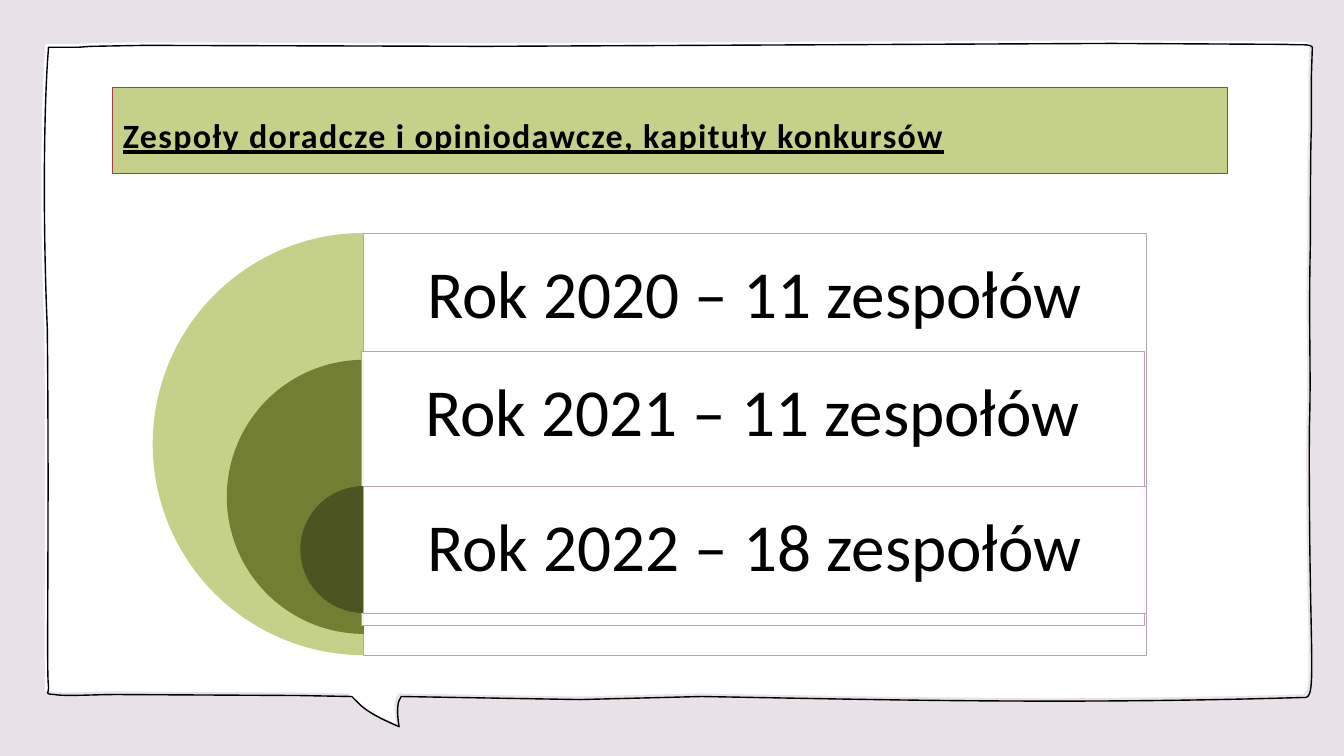
import pptx
import pptx.util
import pptx.dml.color
import pptx.enum.shapes
import pptx.enum.text
import pptx.oxml
import pptx.oxml.ns

Pt = pptx.util.Pt
RGBColor = pptx.dml.color.RGBColor
MSO_SHAPE = pptx.enum.shapes.MSO_SHAPE
MSO_ANCHOR = pptx.enum.text.MSO_ANCHOR
PP_ALIGN = pptx.enum.text.PP_ALIGN
qn = pptx.oxml.ns.qn
DRAWING_NS = pptx.oxml.ns.nsdecls("a")

LILAC = RGBColor(0xE8, 0xE2, 0xE8)
WHITE = RGBColor(0xFF, 0xFF, 0xFF)
BLACK = RGBColor(0x00, 0x00, 0x00)
RED = RGBColor(0xB1, 0x3B, 0x45)
MAUVE = RGBColor(0xB5, 0xA2, 0xB5)
LIGHT_GREEN = RGBColor(0xC5, 0xD1, 0x88)
OLIVE = RGBColor(0x72, 0x7F, 0x32)
DARK_OLIVE = RGBColor(0x4C, 0x54, 0x21)

BUBBLE_START = (7942, 310)
BUBBLE_SEGMENTS = [
    [(9187, 317)],
    [(9281, 324), (9360, 310), (9374, 338)],
    [(9367, 554)],
    [(9367, 677), (9367, 814), (9367, 936)],
    [(9360, 1022), (9360, 1692), (9360, 1742)],
    [(9346, 2376), (9367, 2628), (9353, 3060)],
    [(9346, 4723), (9418, 5004), (9310, 4982)],
    [(7603, 5033), (6278, 4997), (5011, 4975)],
    [(4140, 4997)],
    [(2866, 4975)],
    [(2851, 5004)],
    [(2837, 5033), (2837, 5112), (2851, 5191)],
    [(2772, 5155), (2664, 5112), (2578, 5040)],
    [(2513, 4975)],
    [(2131, 4968)],
    [(842, 4961)],
    [(648, 4961), (475, 4975), (389, 4961)],
    [(310, 4954), (353, 4961), (346, 4896)],
    [(331, 4788), (353, 3758), (338, 2347)],
    [(302, 1490), (317, 691), (346, 353)],
    [(346, 346), (346, 346), (346, 338)],
    [(389, 338)],
    [(554, 338)],
    [(648, 331)],
    [(1030, 324)],
    [(3456, 331)],
]

RING_CENTER = 259.9
PANEL_WIDTH = 558.7
LABEL_HEIGHT = 90.7
YEARS = [
    ("Rok 2020 – 11 zespołów", LIGHT_GREEN, 301.6, 166.4, 166.5, 259.9),
    ("Rok 2021 – 11 zespołów", OLIVE, 195.8, 257, 251.1, 258.5),
    ("Rok 2022 – 18 zespołów", DARK_OLIVE, 90.7, 347.2, 347.2, 259.9),
]


def add_bubble(slide, shift, fill=None, line=None):
    corners = [BUBBLE_START] + [segment[-1] for segment in BUBBLE_SEGMENTS]
    left = min(x for x, y in corners)
    top = min(y for x, y in corners)
    builder = slide.shapes.build_freeform(*BUBBLE_START, scale=Pt(0.1))
    builder.add_line_segments(corners[1:], close=True)
    bubble = builder.convert_to_shape(Pt(shift), Pt(shift))
    edges = list(bubble.element.spPr.iter(qn("a:lnTo")))
    for edge, segment in zip(edges, BUBBLE_SEGMENTS):
        if len(segment) == 3:
            points = "".join(f'<a:pt x="{x - left}" y="{y - top}"/>' for x, y in segment)
            curve = pptx.oxml.parse_xml(
                f"<a:cubicBezTo {DRAWING_NS}>{points}</a:cubicBezTo>")
            edge.getparent().replace(edge, curve)
    style(bubble, fill, line, 1)


def style(shape, fill=None, line=None, line_width=0.5):
    shape.shadow.inherit = False
    if fill is None:
        shape.fill.background()
    else:
        shape.fill.solid()
        shape.fill.fore_color.rgb = fill
    if line is None:
        shape.line.fill.background()
    else:
        shape.line.color.rgb = line
        shape.line.width = Pt(line_width)


def set_font(paragraph, size):
    paragraph.font.name = "Calibri"
    paragraph.font.size = Pt(size)
    paragraph.font.color.rgb = BLACK


def format_title(slide, text):
    title = slide.shapes.title
    slide.shapes.element.append(title.element)
    title.left, title.top = Pt(80.6), Pt(62.2)
    title.width, title.height = Pt(796.3), Pt(61.9)
    title.fill.solid()
    title.fill.fore_color.rgb = LIGHT_GREEN
    title.line.color.rgb = RED
    title.line.width = Pt(0.5)
    frame = title.text_frame
    frame.text = text
    frame.vertical_anchor = MSO_ANCHOR.MIDDLE
    frame.margin_top = Pt(10)
    paragraph = frame.paragraphs[0]
    paragraph.alignment = PP_ALIGN.LEFT
    set_font(paragraph, 24.3)
    paragraph.font.bold = True
    paragraph.font.underline = True
    paragraph._p.pPr.find(qn("a:defRPr")).set("spc", "100")


def add_half_disc(slide, diameter, top, color):
    disc = slide.shapes.add_shape(
        MSO_SHAPE.PIE, Pt(RING_CENTER - diameter / 2), Pt(top), Pt(diameter), Pt(diameter))
    disc.adjustments[0] = 54
    disc.adjustments[1] = 162
    style(disc, color)


def add_panel(slide, left, top, height):
    panel = slide.shapes.add_shape(
        MSO_SHAPE.RECTANGLE, Pt(left), Pt(top), Pt(PANEL_WIDTH), Pt(height))
    style(panel, WHITE, MAUVE)
    color = panel.element.spPr.find(qn("a:solidFill")).find(qn("a:srgbClr"))
    color.append(pptx.oxml.parse_xml(f'<a:alpha {DRAWING_NS} val="90000"/>'))


def add_label(slide, text, left, top):
    frame = slide.shapes.add_textbox(
        Pt(left), Pt(top), Pt(PANEL_WIDTH), Pt(LABEL_HEIGHT)).text_frame
    frame.word_wrap = True
    frame.vertical_anchor = MSO_ANCHOR.MIDDLE
    frame.margin_left = frame.margin_right = Pt(14.4)
    frame.margin_top = frame.margin_bottom = Pt(14.4)
    frame.text = text
    paragraph = frame.paragraphs[0]
    paragraph.alignment = PP_ALIGN.CENTER
    paragraph.line_spacing = 0.9
    set_font(paragraph, 48)


def main():
    presentation = pptx.Presentation()
    presentation.slide_width = Pt(960)
    presentation.slide_height = Pt(540)
    slide = presentation.slides.add_slide(presentation.slide_layouts[5])
    slide.background.fill.solid()
    slide.background.fill.fore_color.rgb = LILAC
    add_bubble(slide, -2.2, fill=WHITE)
    add_bubble(slide, 0, line=BLACK)
    format_title(slide, "Zespoły doradcze i opiniodawcze, kapituły konkursów")
    for text, color, diameter, disc_top, panel_top, left in YEARS:
        add_half_disc(slide, diameter, disc_top, color)
        add_panel(slide, left, panel_top, diameter)
        add_label(slide, text, left, panel_top)
    presentation.save("out.pptx")


if __name__ == "__main__":
    main()
